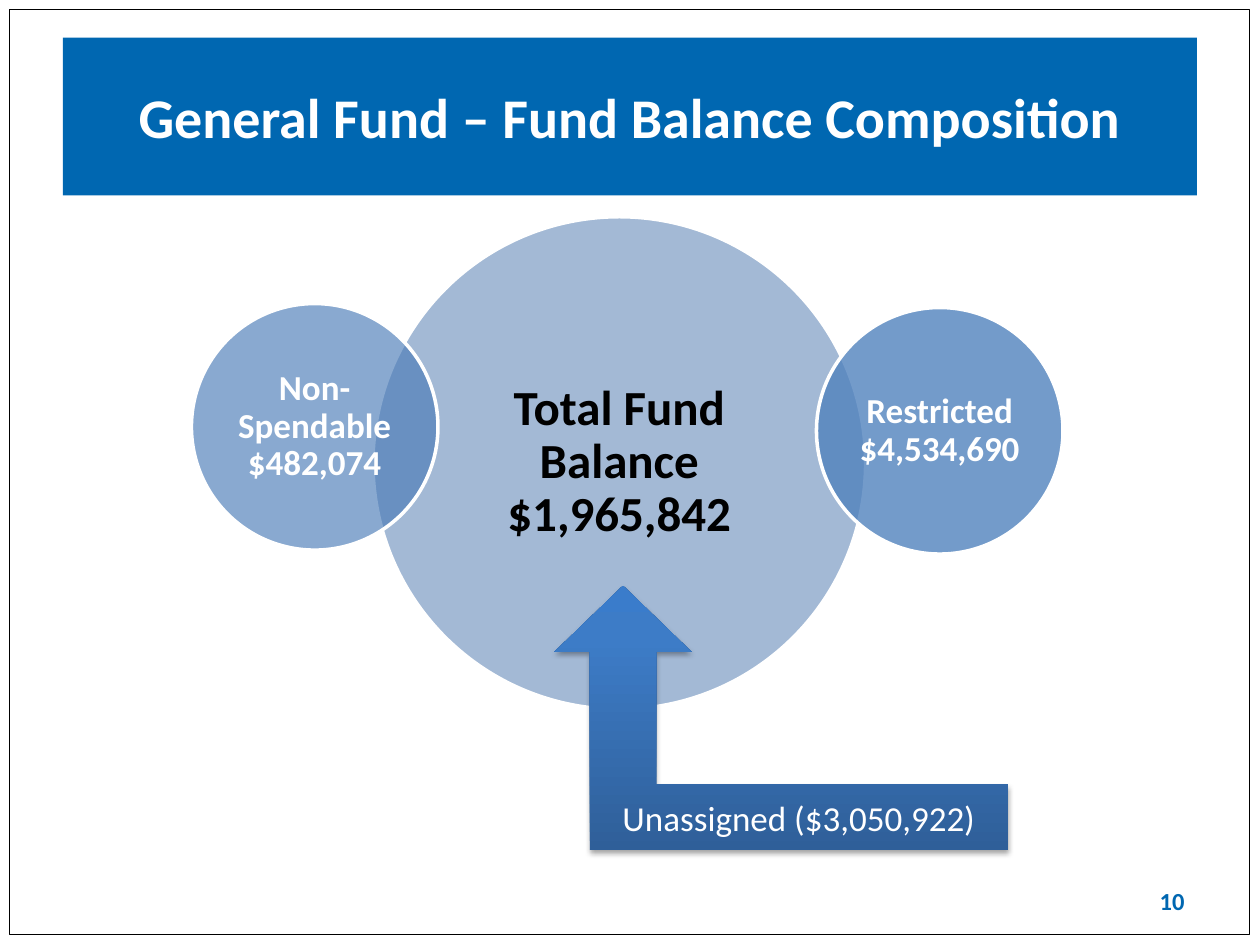
import copy

import lxml.etree
import pptx
import pptx.dml.color
import pptx.enum.shapes
import pptx.enum.text
import pptx.oxml
import pptx.oxml.ns
import pptx.util
from pptx.util import Cm

RGBColor = pptx.dml.color.RGBColor
MSO_SHAPE = pptx.enum.shapes.MSO_SHAPE
PP_ALIGN = pptx.enum.text.PP_ALIGN
qn = pptx.oxml.ns.qn

BRAND_BLUE = RGBColor(0x00, 0x67, 0xB1)
WHITE = RGBColor(0xFF, 0xFF, 0xFF)
BLACK = RGBColor(0x00, 0x00, 0x00)
TOTAL_BLUE = RGBColor(0x48, 0x75, 0xAC)
NON_SPENDABLE_BLUE = RGBColor(0x4A, 0x7B, 0xB7)
RESTRICTED_BLUE = RGBColor(0x51, 0x82, 0xBD)
ARROW_STOPS = [
    (0, RGBColor(0x2F, 0x5F, 0x99)),
    (0.8, RGBColor(0x3D, 0x7C, 0xC7)),
    (1, RGBColor(0x3A, 0x7C, 0xCB)),
]
ARROW_SHADOW = (
    '<a:effectLst xmlns:a="http://schemas.openxmlformats.org/drawingml/2006/main">'
    '<a:outerShdw blurRad="39370" dist="22860" dir="5400000" rotWithShape="0">'
    '<a:srgbClr val="000000"><a:alpha val="35000"/></a:srgbClr>'
    '</a:outerShdw></a:effectLst>'
)


def write(shape, text, size, color, bold=True, align=PP_ALIGN.CENTER):
    frame = shape.text_frame
    frame.word_wrap = True
    frame.vertical_anchor = pptx.enum.text.MSO_ANCHOR.MIDDLE
    paragraph = frame.paragraphs[0]
    paragraph.text = text
    paragraph.alignment = align
    font = paragraph.font
    font.name = "Calibri"
    font.size = pptx.util.Pt(size)
    font.bold = bold
    font.color.rgb = color
    return paragraph


def add_frame(slide):
    frame = slide.shapes.add_shape(
        MSO_SHAPE.RECTANGLE, Cm(0.2), Cm(0.2), Cm(24.98), Cm(18.63))
    frame.shadow.inherit = False
    frame.fill.background()
    frame.line.color.rgb = BLACK
    frame.line.width = pptx.util.Pt(0.5)


def add_title(slide, text):
    banner = slide.shapes.add_shape(
        MSO_SHAPE.RECTANGLE, Cm(1.27), Cm(0.76), Cm(22.86), Cm(3.18))
    banner.shadow.inherit = False
    banner.fill.solid()
    banner.fill.fore_color.rgb = BRAND_BLUE
    banner.line.fill.background()
    write(banner, text, 32, WHITE)


def add_circle(slide, left, top, diameter, fill, opacity, text, size, color, inset):
    circle = slide.shapes.add_shape(
        MSO_SHAPE.OVAL, Cm(left), Cm(top), Cm(diameter), Cm(diameter))
    circle.shadow.inherit = False
    circle.fill.solid()
    circle.fill.fore_color.rgb = fill
    fill_color = circle._element.spPr.find(qn("a:solidFill"))[0]
    lxml.etree.SubElement(fill_color, qn("a:alpha"), val=str(opacity * 1000))
    circle.line.color.rgb = WHITE
    circle.line.width = pptx.util.Pt(2)
    frame = circle.text_frame
    frame.margin_left = frame.margin_right = Cm(inset)
    frame.margin_top = frame.margin_bottom = Cm(inset)
    write(circle, text, size, color).line_spacing = 0.9


def add_arrow(slide, text):
    arrow = slide.shapes.add_shape(
        MSO_SHAPE.BENT_UP_ARROW, Cm(11.18), Cm(11.81), Cm(9.14), Cm(5.33))
    arrow.adjustments[1] = 0.259
    properties = arrow._element.spPr
    properties.find(qn("a:xfrm")).set("flipH", "1")
    arrow.line.fill.background()

    # Gradient running upwards, from dark to light
    arrow.fill.gradient()
    arrow.fill.gradient_angle = 90
    stop_list = properties.find(qn("a:gradFill")).find(qn("a:gsLst"))
    stop_list.append(copy.deepcopy(stop_list[-1]))
    for stop, (position, color) in zip(arrow.fill.gradient_stops, ARROW_STOPS):
        stop.position = position
        stop.color.rgb = color

    properties.append(pptx.oxml.parse_xml(ARROW_SHADOW))
    write(arrow, text, 20, WHITE, bold=False)


def add_page_number(slide, number):
    box = slide.shapes.add_textbox(Cm(18.21), Cm(17.65), Cm(5.92), Cm(1.02))
    write(box, number, 14, BRAND_BLUE, align=PP_ALIGN.RIGHT)


def main():
    presentation = pptx.Presentation()
    presentation.slide_width = Cm(25.4)
    presentation.slide_height = Cm(19.05)
    slide = presentation.slides.add_slide(presentation.slide_layouts[6])

    # Page frame and title
    add_frame(slide)
    add_title(slide, "General Fund – Fund Balance Composition")

    # Fund balance and its parts
    add_circle(slide, 7.52, 4.37, 9.93, TOTAL_BLUE, 50,
               "Total Fund Balance $1,965,842", 28, BLACK, 0.1)
    add_circle(slide, 3.86, 6.12, 4.97, NON_SPENDABLE_BLUE, 65,
               "Non-Spendable $482,074", 20, WHITE, 0.08)
    add_circle(slide, 16.46, 6.2, 4.97, RESTRICTED_BLUE, 80,
               "Restricted $4,534,690", 20, WHITE, 0.08)

    # Page number and unassigned balance
    add_page_number(slide, "10")
    add_arrow(slide, "Unassigned ($3,050,922)")

    presentation.save("out.pptx")


if __name__ == "__main__":
    main()
